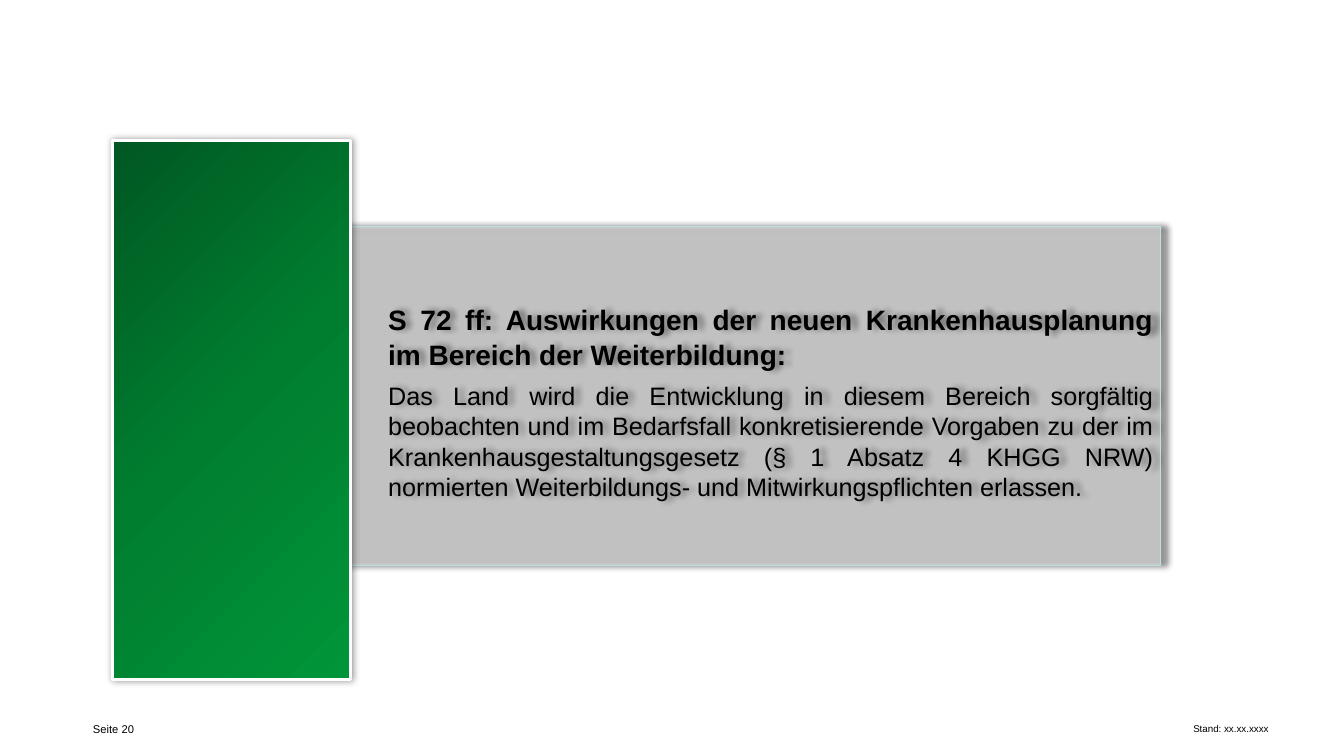
from copy import deepcopy
from dataclasses import dataclass

from pptx import Presentation
from pptx.dml.color import RGBColor
from pptx.enum.shapes import MSO_SHAPE as Preset
from pptx.enum.text import MSO_ANCHOR as Anchor, PP_ALIGN as Align
from pptx.oxml import parse_xml
from pptx.oxml.ns import nsdecls, qn
from pptx.shapes.autoshape import Shape
from pptx.util import Inches, Length, Pt

BLACK = RGBColor(0x00, 0x00, 0x00)
WHITE = RGBColor(0xFF, 0xFF, 0xFF)
AQUA = RGBColor(0xBB, 0xE0, 0xE3)
GREENS = (
    RGBColor(0x00, 0x58, 0x22),
    RGBColor(0x00, 0x7E, 0x30),
    RGBColor(0x00, 0x95, 0x39),
)
FONT = "Arial"


@dataclass
class Box:
    left: float
    top: float
    width: float
    height: float

    def area(self) -> tuple[Length, ...]:
        return tuple(map(Inches, (self.left, self.top, self.width, self.height)))


@dataclass
class Part:
    text: str
    size: float
    bold: bool
    pitch: float
    after: float


@dataclass
class Note:
    text: str
    size: float
    box: Box


PANEL = Box(2.1, 2.25, 9.41, 3.36)
PILLAR = Box(1.12, 1.39, 2.36, 5.35)
PARTS = [
    Part("S 72 ff: Auswirkungen der neuen Krankenhausplanung im Bereich "
         "der Weiterbildung:", 20, True, 25, 6.5),
    Part("Das Land wird die Entwicklung in diesem Bereich sorgfältig beobachten "
         "und im Bedarfsfall konkretisierende Vorgaben zu der im "
         "Krankenhausgestaltungsgesetz (§ 1 Absatz 4 KHGG NRW) normierten "
         "Weiterbildungs- und Mitwirkungspflichten erlassen.", 18, False, 21.7, 0),
]
NOTES = [
    Note("Stand: xx.xx.xxxx", 7, Box(9.4, 7.12, 3.28, 0.33)),
    Note("Seite 20", 8, Box(0.16, 7.12, 1.27, 0.33)),
]


def add_run(para, text: str, size: float, bold: bool = False) -> None:
    run = para.add_run()
    run.text = text
    font = run.font
    font.name, font.size, font.bold = FONT, Pt(size), bold
    font.color.rgb = BLACK


def add_rect(shapes, box: Box, edge: RGBColor, weight: float, shift: float = 0) -> Shape:
    """Add a rectangle with a soft shadow, moved right by shift points."""
    rect = shapes.add_shape(Preset.RECTANGLE, *box.area())
    rect.line.color.rgb = edge
    rect.line.width = Pt(weight)
    rect.shadow.inherit = False
    rect._element.spPr.find(qn("a:effectLst")).append(parse_xml(
        f'<a:outerShdw {nsdecls("a")} blurRad="{Pt(5)}" dist="{Pt(shift)}" dir="0" '
        'algn="ctr" rotWithShape="0"><a:srgbClr val="000000">'
        '<a:alpha val="40000"/></a:srgbClr></a:outerShdw>'))
    return rect


def add_panel(shapes) -> None:
    panel = add_rect(shapes, PANEL, AQUA, 0.75, shift=4)
    panel.fill.solid()
    panel.fill.fore_color.rgb = WHITE
    tint = panel._element.spPr.find(qn("a:solidFill"))[0]
    tint.append(parse_xml(f'<a:alpha {nsdecls("a")} val="40000"/>'))

    frame = panel.text_frame
    frame.word_wrap = True
    frame.vertical_anchor = Anchor.MIDDLE
    frame.margin_left, frame.margin_top = Inches(1.75), Inches(0.17)
    frame.margin_right = frame.margin_bottom = Inches(0.07)
    for i, part in enumerate(PARTS):
        para = frame.add_paragraph() if i else frame.paragraphs[0]
        para.alignment = Align.JUSTIFY
        para.line_spacing = Pt(part.pitch)
        para.space_after = Pt(part.after)
        add_run(para, part.text, part.size, part.bold)


def add_pillar(shapes) -> None:
    pillar = add_rect(shapes, PILLAR, WHITE, 2)
    fill = pillar.fill
    fill.gradient()
    fill.gradient_angle = 315
    stops = pillar._element.spPr.find(qn("a:gradFill")).find(qn("a:gsLst"))
    stops.append(deepcopy(stops[0]))
    for i, (stop, color) in enumerate(zip(fill.gradient_stops, GREENS)):
        stop.position = i / 2
        stop.color.rgb = color


def add_note(shapes, note: Note) -> None:
    frame = shapes.add_textbox(*note.box.area()).text_frame
    frame.word_wrap = True
    para = frame.paragraphs[0]
    para.alignment = Align.RIGHT
    add_run(para, note.text, note.size)


def main() -> None:
    deck = Presentation()
    deck.slide_width, deck.slide_height = Inches(13.33), Inches(7.5)
    slide = deck.slides.add_slide(deck.slide_layouts[6])
    for note in NOTES:
        add_note(slide.shapes, note)
    group = slide.shapes.add_group_shape()
    add_panel(group.shapes)
    add_pillar(group.shapes)
    deck.save("out.pptx")


if __name__ == "__main__":
    main()
